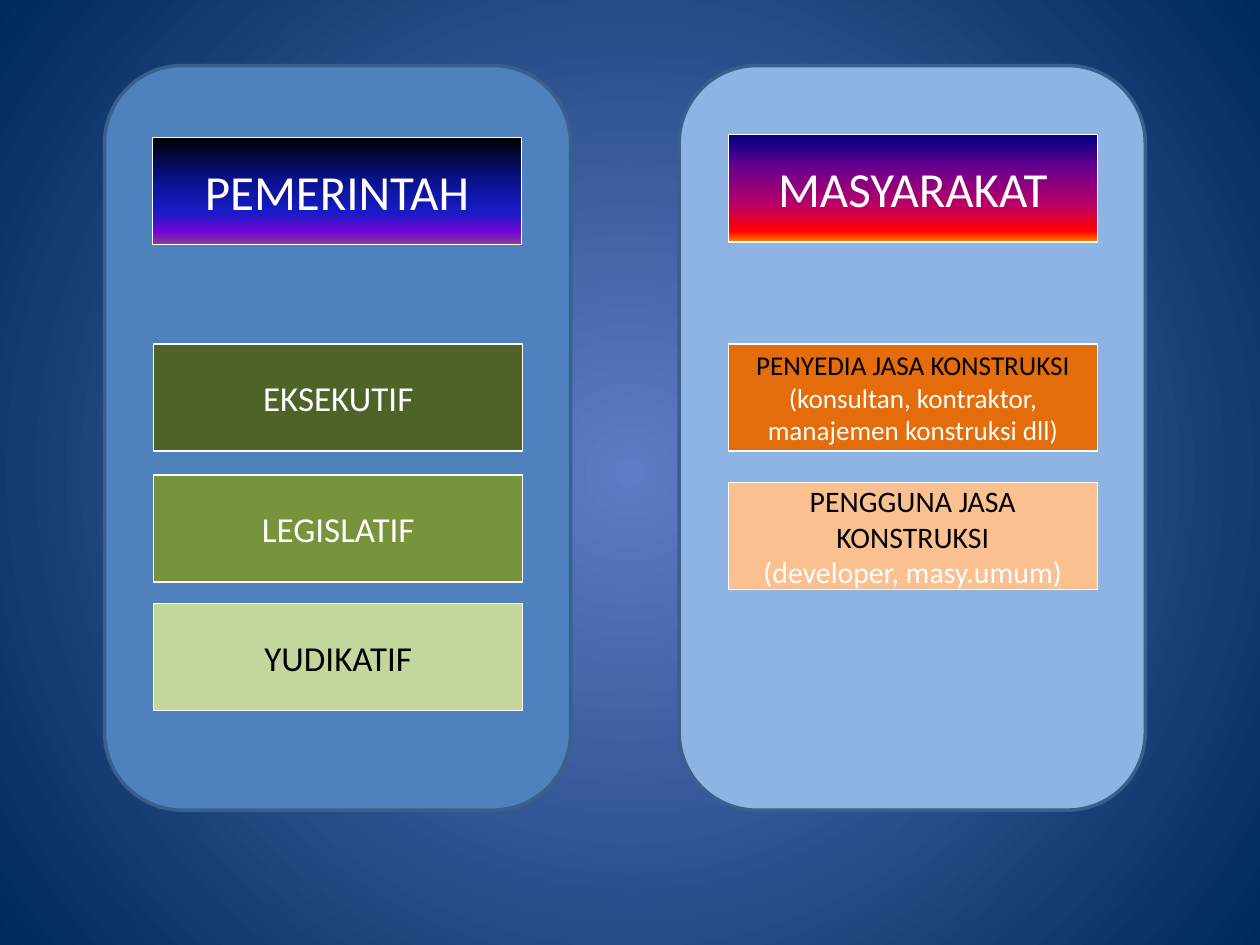
import pptx
import pptx.util
import pptx.dml.color
import pptx.enum.shapes
import pptx.enum.text
import pptx.oxml
import pptx.oxml.ns

Inches = pptx.util.Inches
Pt = pptx.util.Pt
RGBColor = pptx.dml.color.RGBColor
MSO_SHAPE = pptx.enum.shapes.MSO_SHAPE

COLORS = {
    "white": "FFFFFF",
    "black": "000000",
    "panel_line": "3A5F8C",
    "government": "4F81BD",
    "society": "8EB4E3",
    "executive": "4F6228",
    "legislative": "77933C",
    "judicial": "C3D69B",
    "provider": "E46C0A",
    "user": "FAC090",
}
GRADIENTS = {
    "background": [(0, "5E7CC5"), (100, "00295C")],
    "government_title": [(0, "000000"), (40, "0A128C"), (70, "181CC7"), (88, "7005D4"), (100, "8C3D91")],
    "society_title": [(0, "000082"), (30, "66008F"), (65, "BA0066"), (90, "FF0000"), (100, "FF8200")],
}


def set_gradient(fill, owner, stops, direction):
    fill.gradient()
    gradient = owner.find(".//" + pptx.oxml.ns.qn("a:gradFill"))
    stop_xml = "".join(
        f'<a:gs pos="{position * 1000}"><a:srgbClr val="{color}"/></a:gs>' for position, color in stops
    )
    replacement = pptx.oxml.parse_xml(
        f'<a:gradFill {pptx.oxml.ns.nsdecls("a")} rotWithShape="1"><a:gsLst>{stop_xml}</a:gsLst>{direction}</a:gradFill>'
    )
    gradient.getparent().replace(gradient, replacement)


def add_block(kind, left, top, width, height, fill, line, line_width):
    shape = slide.shapes.add_shape(kind, Inches(left), Inches(top), Inches(width), Inches(height))
    shape.shadow.inherit = False
    if fill in GRADIENTS:
        set_gradient(shape.fill, shape.element, GRADIENTS[fill], '<a:lin ang="5400000" scaled="0"/>')
    else:
        shape.fill.solid()
        shape.fill.fore_color.rgb = RGBColor.from_string(COLORS[fill])
    shape.line.color.rgb = RGBColor.from_string(COLORS[line])
    shape.line.width = Pt(line_width)
    return shape


presentation = pptx.Presentation()
presentation.slide_width = Inches(10)
presentation.slide_height = Inches(7.5)
slide = presentation.slides.add_slide(presentation.slide_layouts[6])
set_gradient(
    slide.background.fill,
    slide.element,
    GRADIENTS["background"],
    '<a:path path="circle"><a:fillToRect l="50000" t="50000" r="50000" b="50000"/></a:path>',
)

for left, fill in [(5.39, "society"), (0.83, "government")]:
    add_block(MSO_SHAPE.ROUNDED_RECTANGLE, left, 0.52, 3.7, 5.91, fill, "panel_line", 2)

boxes = [
    (1.21, 1.09, "government_title", 28, [("PEMERINTAH", "white")]),
    (5.78, 1.07, "society_title", 28, [("MASYARAKAT", "white")]),
    (1.22, 2.73, "executive", 20, [("EKSEKUTIF", "white")]),
    (1.22, 3.77, "legislative", 20, [("LEGISLATIF", "white")]),
    (1.22, 4.79, "judicial", 20, [("YUDIKATIF", "black")]),
    (5.78, 2.73, "provider", 15.5, [
        ("PENYEDIA JASA KONSTRUKSI", "black"),
        ("(konsultan, kontraktor, manajemen konstruksi dll)", "white"),
    ]),
    (5.78, 3.83, "user", 17, [
        ("PENGGUNA JASA KONSTRUKSI", "black"),
        ("(developer, masy.umum)", "white"),
    ]),
]
for left, top, fill, size, lines in boxes:
    box = add_block(MSO_SHAPE.RECTANGLE, left, top, 2.93, 0.85, fill, "white", 0.75)
    frame = box.text_frame
    frame.word_wrap = True
    frame.vertical_anchor = pptx.enum.text.MSO_ANCHOR.MIDDLE
    frame.text = "\n".join(text for text, color in lines)
    for paragraph, (text, color) in zip(frame.paragraphs, lines):
        paragraph.alignment = pptx.enum.text.PP_ALIGN.CENTER
        paragraph.font.name = "Calibri"
        paragraph.font.size = Pt(size)
        paragraph.font.color.rgb = RGBColor.from_string(COLORS[color])

presentation.save("out.pptx")
